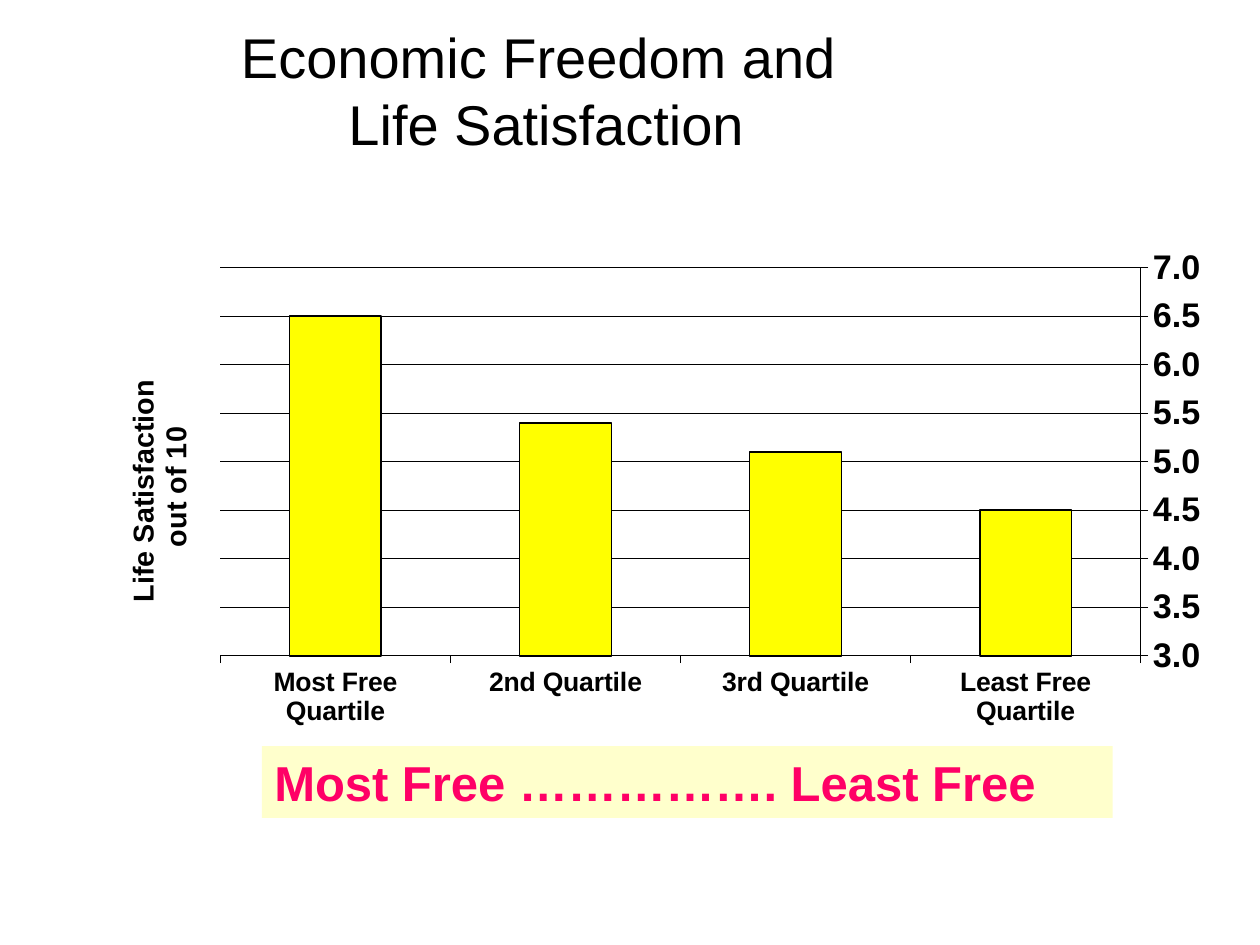
from dataclasses import dataclass

from lxml import etree
from pptx import Presentation
from pptx import util as u
from pptx.chart.data import CategoryChartData
from pptx.dml.color import RGBColor
from pptx.enum import chart as charts, shapes, text
from pptx.oxml.ns import qn


@dataclass(frozen=True)
class Theme:
    font: str = "Arial"
    ink: str = "000000"
    bar: str = "FFFF00"
    band: str = "FFFFCC"
    accent: str = "FF0066"
    title_size: float = 32
    band_size: float = 28
    value_size: float = 19.5
    axis_title_size: float = 16.4
    category_size: float = 15.2
    hairline: float = 0.27
    outline: float = 1.07


@dataclass(frozen=True)
class Box:
    left: float
    top: float
    width: float
    height: float

    def lengths(self) -> tuple:
        return tuple(u.Cm(v) for v in (self.left, self.top, self.width, self.height))


THEME = Theme()
TITLE_BOX = Box(0.64, 0, 20.75, 3.61)
CHART_BOX = Box(1.42, 5, 22.78, 11.46)
BAND_BOX = Box(5.28, 15.04, 17.15, 1.45)
SATISFACTION = {
    "Least Free Quartile": 4.5,
    "3rd Quartile": 5.1,
    "2nd Quartile": 5.4,
    "Most Free Quartile": 6.5,
}


def style_font(font, size: float, color: str = THEME.ink, bold: bool = False) -> None:
    font.name = THEME.font
    font.size = u.Pt(size)
    font.bold = bold
    font.color.rgb = RGBColor.from_string(color)


def style_line(line, width: float) -> None:
    line.color.rgb = RGBColor.from_string(THEME.ink)
    line.width = u.Pt(width)


def style_axis(axis, size: float) -> None:
    axis.major_tick_mark = charts.XL_TICK_MARK.OUTSIDE
    axis.minor_tick_mark = charts.XL_TICK_MARK.NONE
    style_line(axis.format.line, THEME.hairline)
    style_font(axis.tick_labels.font, size, bold=True)


def place_in_chart(element, index: int, **settings) -> None:
    """Give a chart part a manual layout in fractions of the chart."""
    layout = element.find(qn("c:layout"))
    if layout is None:
        layout = etree.Element(qn("c:layout"))
        element.insert(index, layout)
    manual = etree.SubElement(layout, qn("c:manualLayout"))
    for name, value in settings.items():
        etree.SubElement(manual, qn(f"c:{name}")).set("val", str(value))


def add_title(slide) -> None:
    title = slide.shapes.title
    title.left, title.top, title.width, title.height = TITLE_BOX.lengths()
    frame = title.text_frame
    frame.text = "Economic Freedom and \vLife Satisfaction"
    frame.auto_size = text.MSO_AUTO_SIZE.NONE
    frame.vertical_anchor = text.MSO_ANCHOR.MIDDLE
    paragraph = frame.paragraphs[0]
    paragraph.alignment = text.PP_ALIGN.CENTER
    for run in paragraph.runs:
        style_font(run.font, THEME.title_size)


def add_satisfaction_chart(slide) -> None:
    data = CategoryChartData(number_format="0.0")
    data.categories = list(SATISFACTION)
    data.add_series("Series 1", list(SATISFACTION.values()))
    chart = slide.shapes.add_chart(
        charts.XL_CHART_TYPE.COLUMN_CLUSTERED, *CHART_BOX.lengths(), data
    ).chart
    chart.has_legend = False
    chart.has_title = False
    style_font(chart.font, THEME.value_size, bold=True)

    # Bars
    plot = chart.plots[0]
    plot.gap_width = 150
    plot.vary_by_categories = False
    bars = plot.series[0].format
    bars.fill.solid()
    bars.fill.fore_color.rgb = RGBColor.from_string(THEME.bar)
    style_line(bars.line, THEME.outline)

    # Reversed categories put the value axis on the right
    category_axis = chart.category_axis
    style_axis(category_axis, THEME.category_size)
    category_axis.reverse_order = True
    category_axis.tick_label_position = charts.XL_TICK_LABEL_POSITION.LOW

    value_axis = chart.value_axis
    style_axis(value_axis, THEME.value_size)
    value_axis.minimum_scale, value_axis.maximum_scale = 3, 7
    value_axis.major_unit = 0.5
    value_axis.tick_labels.number_format = "0.0"
    value_axis.tick_labels.number_format_is_linked = False
    style_line(value_axis.major_gridlines.format.line, THEME.hairline)

    # Axis title, turned upright at the far left
    axis_title = value_axis.axis_title
    frame = axis_title.text_frame
    frame.text = "Life Satisfaction \nout of 10"
    for paragraph in frame.paragraphs:
        paragraph.alignment = text.PP_ALIGN.CENTER
        for run in paragraph.runs:
            style_font(run.font, THEME.axis_title_size, bold=True)
    body = axis_title._element.find(".//" + qn("a:bodyPr"))
    body.set("rot", "-5400000")
    body.set("vert", "horz")
    place_in_chart(axis_title._element, 1, xMode="edge", yMode="edge", x=0.045, y=0.21)

    plot_area = chart._chartSpace.find(".//" + qn("c:plotArea"))
    place_in_chart(plot_area, 0, layoutTarget="inner", xMode="edge", yMode="edge",
                   x=0.133, y=0.034, w=0.816, h=0.683)


def add_band(slide) -> None:
    band = slide.shapes.add_shape(shapes.MSO_SHAPE.RECTANGLE, *BAND_BOX.lengths())
    band.shadow.inherit = False
    band.fill.solid()
    band.fill.fore_color.rgb = RGBColor.from_string(THEME.band)
    band.line.fill.background()
    frame = band.text_frame
    frame.text = "Most Free ……………. Least Free"
    frame.word_wrap = True
    frame.auto_size = text.MSO_AUTO_SIZE.SHAPE_TO_FIT_TEXT
    frame.vertical_anchor = text.MSO_ANCHOR.TOP
    paragraph = frame.paragraphs[0]
    paragraph.alignment = text.PP_ALIGN.LEFT
    style_font(paragraph.runs[0].font, THEME.band_size, THEME.accent, bold=True)


def main() -> None:
    presentation = Presentation()
    presentation.slide_width, presentation.slide_height = u.Cm(25.4), u.Cm(19.05)
    slide = presentation.slides.add_slide(presentation.slide_layouts[5])
    add_title(slide)
    add_satisfaction_chart(slide)
    add_band(slide)
    presentation.save("out.pptx")


if __name__ == "__main__":
    main()
